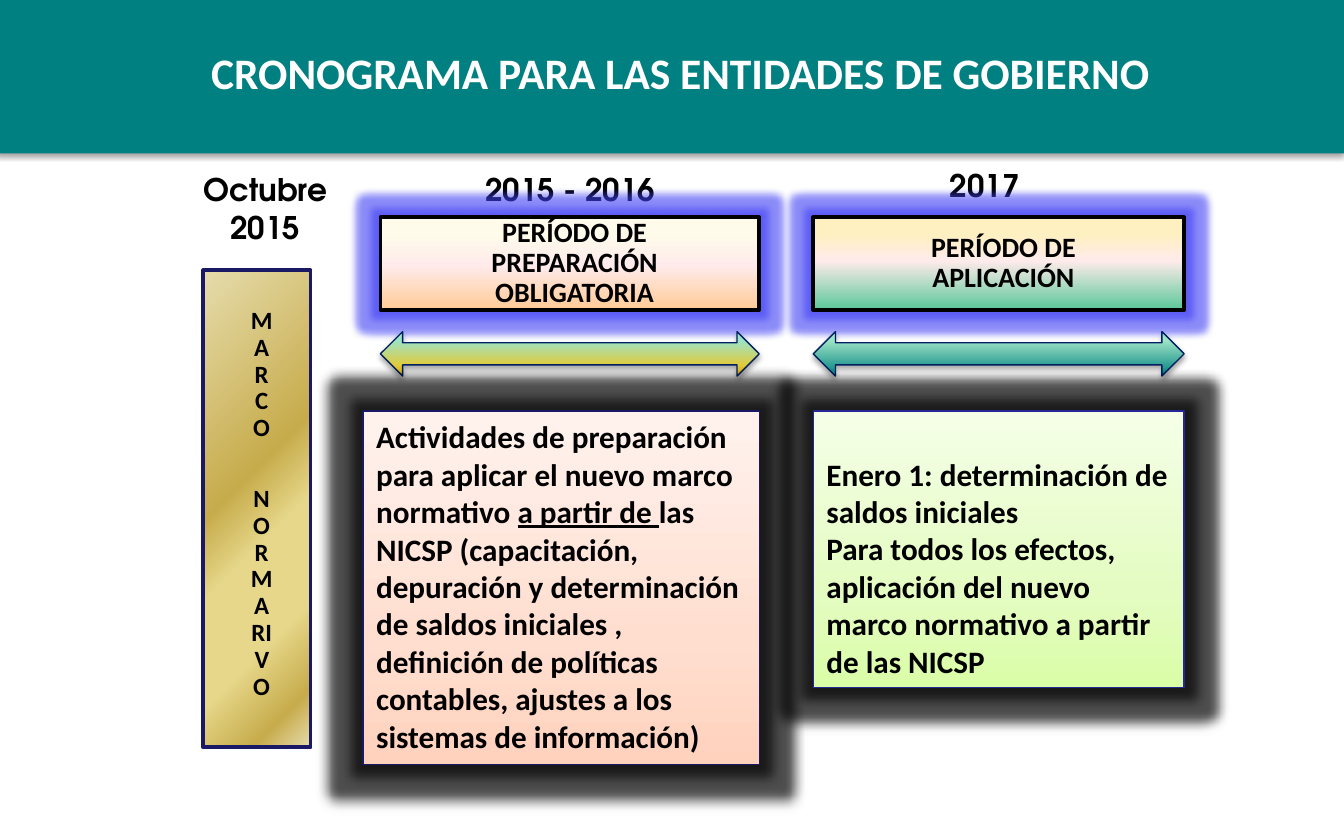
from lxml import etree
from pptx import Presentation
from pptx.dml.color import RGBColor as RGB
from pptx.enum.shapes import MSO_SHAPE as Kind
from pptx.enum.text import MSO_ANCHOR as Anchor, PP_ALIGN as Align
from pptx.oxml.ns import qn
from pptx.util import Cm, Pt

TEAL = RGB(0x00, 0x80, 0x80)
WHITE = RGB(0xFF, 0xFF, 0xFF)
BLACK = RGB(0x00, 0x00, 0x00)
NAVY = RGB(0x19, 0x19, 0x66)
INDIGO = RGB(0x26, 0x26, 0x99)
DEEP = RGB(0x00, 0x20, 0x60)
BLUE = RGB(0x40, 0x40, 0xF5)

PEACH = [(2, "FFCC99"), (48, "FFEBEB"), (82, "FFFBEB")]
MINT = [(2, "60C99C"), (53, "FFEBEB"), (82, "FFF0C1")]
ROSE = [(0, "FFD2BD"), (35, "FFDED0"), (100, "FFF2ED")]
LIME = [(0, "DAFDA7"), (35, "E4FCC2"), (100, "F5FFE7")]
AMBER = [(0, "FFC000"), (80, "9DE3C5"), (100, "9CE6C6")]
SEA = [(0, "008080")] + AMBER[1:]
GOLD = [(0, "E6DCAC"), (43, "C7AC4C"), (57, "E6D78A"),
        (75, "E6D78A"), (90, "C7AC4C"), (100, "E6DCAC")]

SIDE = (1.3, 0.1, 1.12, 0.1)
PLAIN = (0.25, 0.13, 0.25, 0.13)


def add_tint(parent, tag, color, alpha=100, **attrs):
    """Append an XML element that holds one colour."""
    node = etree.SubElement(parent, qn(tag))
    for name, value in attrs.items():
        node.set(name, str(value))
    tint = etree.SubElement(node, qn("a:srgbClr"), val=str(color))
    if alpha < 100:
        etree.SubElement(tint, qn("a:alpha"), val=str(alpha * 1000))


def write(shape, *paras, font="Calibri", size=16.7, color=BLACK,
          align=Align.CENTER, anchor=Anchor.TOP, pad=PLAIN, lead=None, gap=0):
    """Fill a shape; each paragraph is a list of (text, underlined) or a string."""
    frame = shape.text_frame
    frame.word_wrap = True
    frame.vertical_anchor = anchor
    (frame.margin_left, frame.margin_top,
     frame.margin_right, frame.margin_bottom) = map(Cm, pad)
    for i, para in enumerate(paras):
        line = frame.add_paragraph() if i else frame.paragraphs[0]
        line.alignment = align
        if lead:
            line.line_spacing = lead
        if i and gap:
            line.space_before = Pt(gap)
        for text, under in [(para, False)] if isinstance(para, str) else para:
            run = line.add_run()
            run.text = text
            run.font.name = font
            run.font.size = Pt(size)
            run.font.bold = True
            run.font.color.rgb = color
            if under:
                run.font.underline = True


class Deck:
    head = dict(size=15, anchor=Anchor.MIDDLE, pad=SIDE, lead=0.9)
    date = "TeX Gyre Adventor"

    def __init__(self, slide):
        self.slide = slide

    def shape(self, kind, box, fill, line=None, width=0.75, turn=90,
              glow=None, shade=None):
        """Draw a shape; glow is (colour, points), shade is the shadow's alpha."""
        item = self.slide.shapes.add_shape(kind, *map(Cm, box))
        if isinstance(fill, list):
            item.fill.gradient()
            item.fill.gradient_angle = turn
            stops = item._element.spPr.find(qn("a:gradFill")).find(qn("a:gsLst"))
            for old in list(stops):
                stops.remove(old)
            for pos, color in fill:
                add_tint(stops, "a:gs", color, pos=pos * 1000)
        else:
            item.fill.solid()
            item.fill.fore_color.rgb = fill
        if line is None:
            item.line.fill.background()
        else:
            item.line.color.rgb = line
            item.line.width = Pt(width)
        item.shadow.inherit = False
        effects = item._element.spPr.find(qn("a:effectLst"))
        if glow:
            add_tint(effects, "a:glow", glow[0], 60, rad=Pt(glow[1]))
        if shade:
            add_tint(effects, "a:outerShdw", BLACK, shade, blurRad=Pt(3.1),
                     dist=Pt(1.6), dir=5400000, rotWithShape=0)
        return item

    def label(self, box, text, **style):
        item = self.slide.shapes.add_textbox(*map(Cm, box))
        write(item, text, **style)

    def period(self, left, width, text, fill):
        item = self.shape(Kind.RECTANGLE, (left, 4.11, width, 1.75), fill,
                          BLACK, 2, glow=(BLUE, 8))
        write(item, text, **self.head)

    def arrow(self, left, width, fill):
        self.shape(Kind.LEFT_RIGHT_ARROW, (left, 6.27, width, 0.84), fill,
                   DEEP, shade=35)

    def detail(self, left, width, height, fill, line, *paras, pad=PLAIN):
        item = self.shape(Kind.RECTANGLE, (left, 7.77, width, height), fill,
                          line, glow=(BLACK, 12), shade=38)
        write(item, *paras, align=Align.LEFT, pad=pad)


def main():
    prs = Presentation()
    prs.slide_width, prs.slide_height = Cm(25.4), Cm(15.88)
    deck = Deck(prs.slides.add_slide(prs.slide_layouts[6]))

    deck.shape(Kind.RECTANGLE, (-0.1, -0.05, 25.5, 2.95), TEAL, shade=38)
    deck.label((2.74, 0.66, 20.24, 1.42),
               "CRONOGRAMA PARA LAS ENTIDADES DE GOBIERNO",
               size=23.3, color=WHITE, anchor=Anchor.MIDDLE)

    for box, text in [((3.53, 3.1, 2.97, 1.68), "Octubre 2015"),
                      ((8.53, 3.1, 4.5, 0.97), "2015 - 2016"),
                      ((16.69, 3.02, 3.84, 0.97), "2017")]:
        deck.label(box, text, font=deck.date)

    for left, width, text, fill, tone in [
            (7.19, 7.16, "PERÍODO DE PREPARACIÓN OBLIGATORIA", PEACH, AMBER),
            (15.37, 7.01, "PERÍODO DE APLICACIÓN", MINT, SEA)]:
        deck.period(left, width, text, fill)
        deck.arrow(left, width, tone)

    deck.detail(6.86, 7.49, 6.68, ROSE, NAVY, [
        ("Actividades de preparación para aplicar el nuevo marco normativo ", False),
        ("a partir de ", True),
        ("las NICSP (capacitación, depuración y determinación de saldos "
         "iniciales , definición de políticas contables, ajustes a los "
         "sistemas de información)", False)])
    deck.detail(15.37, 7.01, 5.23, LIME, INDIGO,
                "Enero 1: determinación de saldos iniciales",
                "Para todos los efectos, aplicación del nuevo marco normativo "
                "a partir de las NICSP",
                pad=(0.25, 0.83, 0.25, 0.13))

    frame = deck.shape(Kind.RECTANGLE, (3.84, 5.11, 2.03, 9.02), GOLD,
                       NAVY, 2, turn=315)
    write(frame, "MARCO", "NORMARIVO", size=13.3, anchor=Anchor.MIDDLE,
          pad=(1.32, 0.1, 1.14, 0.27), lead=0.9, gap=23.5)

    prs.save("out.pptx")


if __name__ == "__main__":
    main()
